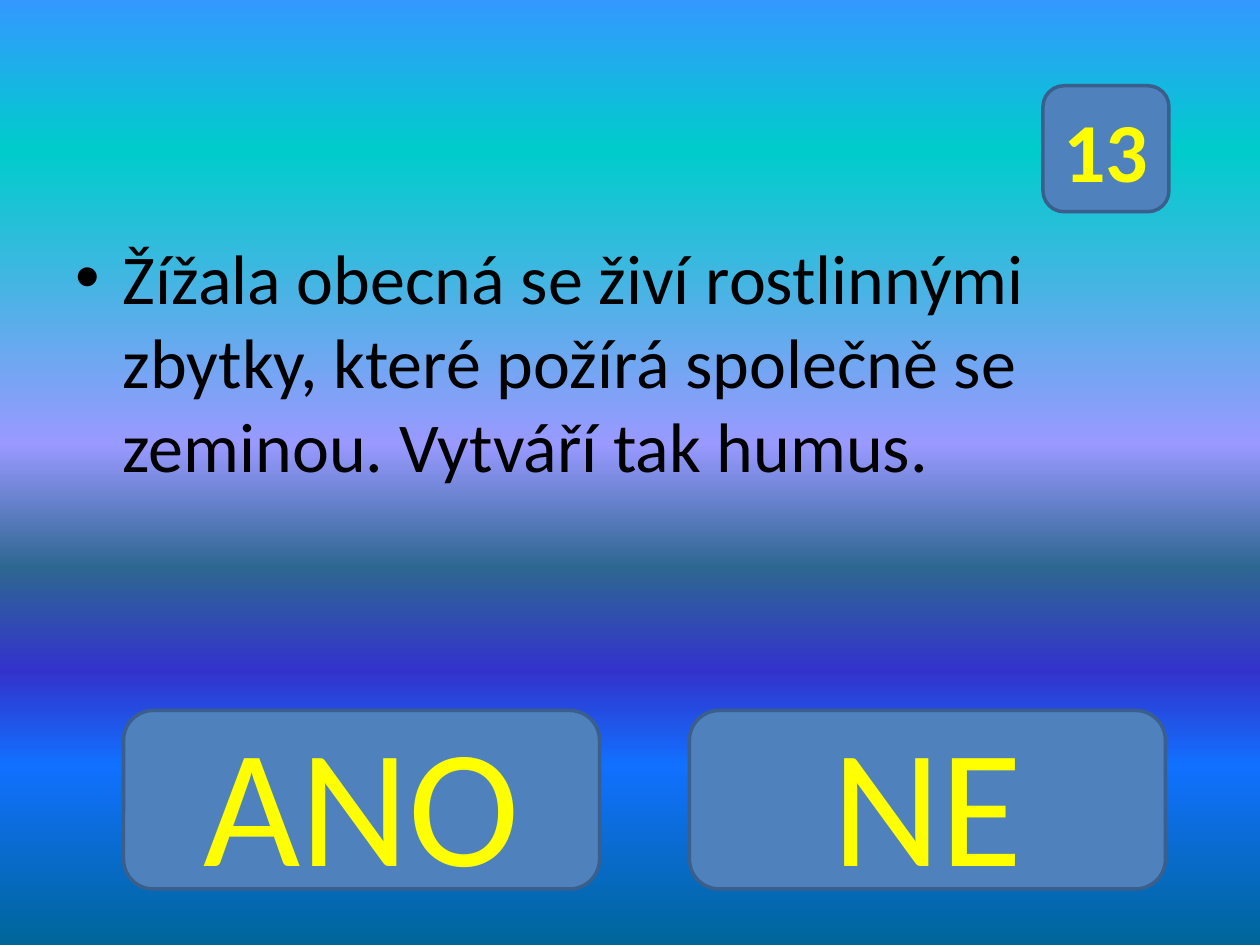
from lxml import etree
from pptx import Presentation
from pptx.dml.color import RGBColor
from pptx.enum import shapes, text
from pptx.oxml.ns import qn
from pptx.util import Pt

HUES = {"fill": "4F81BD", "edge": "3A5F8C", "label": "FFFF00", "body": "000000"}
STOPS = {0: "3399FF", 16: "00CCCC", 47: "9999FF", 60: "2E6792",
         71: "3333CC", 81: "1170FF", 100: "006699"}


def hue(name):
    return RGBColor.from_string(HUES[name])


def style(run, size, name, bold=False):
    run.font.name = "Calibri"
    run.font.size = Pt(size)
    run.font.bold = bold
    run.font.color.rgb = hue(name)


deck = Presentation()
deck.slide_width, deck.slide_height = Pt(720), Pt(540)
slide = deck.slides.add_slide(deck.slide_layouts[1])

# Background gradient, running top to bottom
back = slide.background.fill
back.gradient()
back.gradient_angle = 270
stops = slide.element.find(".//" + qn("a:gsLst"))
stops.clear()
for pos, code in STOPS.items():
    stop = etree.SubElement(stops, qn("a:gs"), pos=str(pos * 1000))
    etree.SubElement(stop, qn("a:srgbClr"), val=code)

# Statement; the top inset leaves room for the number
title = slide.shapes.title
title.element.getparent().remove(title.element)
body = slide.placeholders[1]
body.left, body.top, body.width, body.height = Pt(36), Pt(37.4), Pt(648), Pt(340)
frame = body.text_frame
frame.text = ("Žížala obecná se živí rostlinnými zbytky, které požírá "
              "společně se zeminou. Vytváří tak humus.")
frame.auto_size = text.MSO_AUTO_SIZE.NONE
frame.margin_top = Pt(96.5)
para = frame.paragraphs[0]
para.space_before = Pt(0)
style(para.runs[0], 40, "body")

# Answer buttons and question number
buttons = [
    ("ANO", 70.6, 406, 272, 102, 96, False),
    ("NE", 394, 406, 272, 102, 96, False),
    ("13", 596, 49, 72, 72, 48, True),
]
for label, left, top, width, height, size, bold in buttons:
    button = slide.shapes.add_shape(shapes.MSO_SHAPE.ROUNDED_RECTANGLE,
                                    Pt(left), Pt(top), Pt(width), Pt(height))
    button.shadow.inherit = False
    button.fill.solid()
    button.fill.fore_color.rgb = hue("fill")
    button.line.color.rgb = hue("edge")
    button.line.width = Pt(2)
    frame = button.text_frame
    frame.text = label
    frame.vertical_anchor = text.MSO_ANCHOR.MIDDLE
    para = frame.paragraphs[0]
    para.alignment = text.PP_ALIGN.CENTER
    style(para.runs[0], size, "label", bold)

deck.save("out.pptx")
